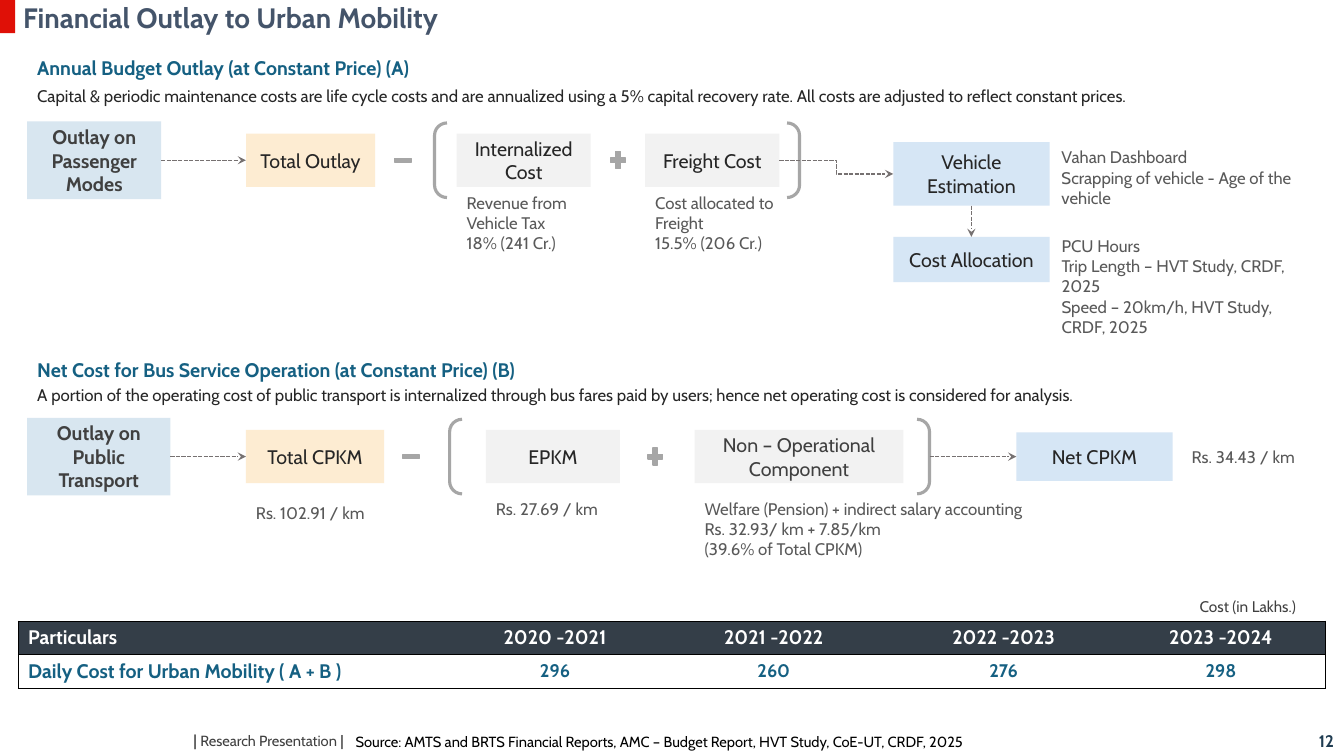
from dataclasses import dataclass

from lxml.etree import SubElement
from pptx import Presentation
from pptx.dml.color import RGBColor
from pptx.enum.dml import MSO_LINE as Dash
from pptx.enum.shapes import MSO_CONNECTOR as Link, MSO_SHAPE as Kind
from pptx.enum.text import MSO_ANCHOR as Anchor, PP_ALIGN as Align
from pptx.oxml.ns import qn
from pptx.util import Inches, Pt

FONT = "Cabin"
BLACK = RGBColor(0x00, 0x00, 0x00)
WHITE = RGBColor(0xFF, 0xFF, 0xFF)
RED = RGBColor(0xDF, 0x10, 0x07)
NAVY = RGBColor(0x20, 0x3D, 0x52)
SLATE = RGBColor(0x44, 0x54, 0x6A)
TEAL = RGBColor(0x15, 0x60, 0x82)
INK = RGBColor(0x26, 0x26, 0x26)
CHARCOAL = RGBColor(0x40, 0x40, 0x40)
NOTE_GREY = RGBColor(0x59, 0x59, 0x59)
ARROW_GREY = RGBColor(0x76, 0x71, 0x71)
SIGN_GREY = RGBColor(0xA6, 0xA6, 0xA6)
PALE_GREY = RGBColor(0xF2, 0xF2, 0xF2)
PALE_TEAL = RGBColor(0xD8, 0xE6, 0xF0)
PALE_BLUE = RGBColor(0xD6, 0xE6, 0xF5)
CREAM = RGBColor(0xFD, 0xEC, 0xD2)
HEADER = RGBColor(0x34, 0x3E, 0x48)


@dataclass
class Box:
    left: float
    top: float
    width: float
    height: float

    def inside(self, left, top, width, height):
        return Box(self.left + left, self.top + top, width, height)

    def centred(self, left, middle, width, height):
        return self.inside(left, middle - height / 2, width, height)

    def lengths(self):
        return [Inches(v) for v in (self.left, self.top, self.width, self.height)]


def add_span(para, text, size, color, bold=False):
    span = para.add_run()
    span.text = text
    span.font.name = FONT
    span.font.size = Pt(size)
    span.font.bold = bold
    span.font.color.rgb = color


def add_text(page, box, lines, size, color, bold=False, align=Align.LEFT, anchor=Anchor.TOP):
    frame = page.shapes.add_textbox(*box.lengths()).text_frame
    frame.word_wrap = True
    frame.vertical_anchor = anchor
    for index, line in enumerate(lines):
        para = frame.add_paragraph() if index else frame.paragraphs[0]
        para.alignment = align
        add_span(para, line, size, color, bold)
    return frame


def add_note(page, box, *lines):
    add_text(page, box, lines, 12, NOTE_GREY)


def add_plain(page, kind, box, fill=None, line=None, width=1):
    shape = page.shapes.add_shape(kind, *box.lengths())
    shape.shadow.inherit = False
    if fill is None:
        shape.fill.background()
    else:
        shape.fill.solid()
        shape.fill.fore_color.rgb = fill
    if line is None:
        shape.line.fill.background()
    else:
        shape.line.color.rgb = line
        shape.line.width = Pt(width)
    return shape


def add_node(page, box, text, fill, color=INK, bold=False):
    node = add_plain(page, Kind.RECTANGLE, box, fill)
    frame = node.text_frame
    frame.word_wrap = True
    frame.vertical_anchor = Anchor.MIDDLE
    frame.paragraphs[0].alignment = Align.CENTER
    add_span(frame.paragraphs[0], text, 14, color, bold)
    return node


def add_arrow(page, start, end, link=Link.STRAIGHT, sides=(3, 1)):
    arrow = page.shapes.add_connector(link, 0, 0, 0, 0)
    arrow.begin_connect(start, sides[0])
    arrow.end_connect(end, sides[1])
    arrow.line.color.rgb = ARROW_GREY
    arrow.line.width = Pt(1)
    arrow.line.dash_style = Dash.SQUARE_DOT
    properties = arrow._element.spPr
    SubElement(properties.find(qn("a:ln")), qn("a:tailEnd"), type="stealth")
    SubElement(properties, qn("a:effectLst"))


def add_heading(page, box, title, description, gap):
    add_text(page, box.inside(0, 0, 5.85, 0.34), [title], 14, TEAL, True)
    add_text(page, box.inside(0, gap, box.width, 0.3), [description], 12, INK)


def add_cost_row(page, box, middle, outlay, total, terms, minus, bracket, plus):
    outlay_text, outlay_width = outlay
    total_text, total_width = total
    first = add_node(page, box.centred(0, middle, outlay_width, 0.77),
                     outlay_text, PALE_TEAL, CHARCOAL, True)
    second = add_node(page, box.centred(2.17, middle, total_width, 0.53), total_text, CREAM)
    add_arrow(page, first, second)
    for kind, left, width, height in ((Kind.MATH_MINUS, minus, 0.23, 0.14),
                                      (Kind.MATH_PLUS, plus, 0.2, 0.23)):
        add_plain(page, kind, box.centred(left, middle, width, height), SIGN_GREY, SIGN_GREY)
    nodes = [add_node(page, box.centred(left, middle, width, 0.53), text, PALE_GREY, color)
             for text, left, width, color in terms]
    left, width = bracket
    pair = add_plain(page, Kind.DOUBLE_BRACKET, box.centred(left, middle, width, 0.74),
                     None, SIGN_GREY, 2.25)
    return nodes, pair


def draw_budget_outlay(page, box):
    add_heading(page, box, "Annual Budget Outlay (at Constant Price) (A)",
                "Capital & periodic maintenance costs are life cycle costs and are annualized using "
                "a 5% capital recovery rate. All costs are adjusted to reflect constant prices.", 0.29)
    terms = [("Internalized Cost", 4.26, 1.33, INK), ("Freight Cost", 6.13, 1.33, INK)]
    nodes, _ = add_cost_row(page, box, 1.08, ("Outlay on Passenger Modes", 1.33),
                            ("Total Outlay", 1.28), terms, 3.61, (4.04, 3.62), 5.76)
    add_note(page, box.inside(4.26, 1.35, 1.43, 0.71), "Revenue from Vehicle Tax", "18% (241 Cr.)")
    add_note(page, box.inside(6.13, 1.35, 1.42, 0.71), "Cost allocated to Freight", "15.5% (206 Cr.)")
    vehicle = add_node(page, box.inside(8.59, 0.9, 1.55, 0.63), "Vehicle Estimation", PALE_BLUE)
    allocation = add_node(page, box.inside(8.59, 1.84, 1.55, 0.45), "Cost Allocation", PALE_BLUE)
    add_arrow(page, nodes[-1], vehicle, Link.ELBOW)
    add_arrow(page, vehicle, allocation, sides=(2, 0))
    add_note(page, box.inside(10.16, 0.9, 2.7, 0.71), "Vahan Dashboard",
             "Scrapping of vehicle - Age of the vehicle")
    add_note(page, box.inside(10.16, 1.78, 2.72, 1.11), "PCU Hours",
             "Trip Length – HVT Study, CRDF, 2025", "Speed – 20km/h, HVT Study, CRDF, 2025")


def draw_bus_net_cost(page, box):
    add_heading(page, box, "Net Cost for Bus Service Operation (at Constant Price) (B)",
                "A portion of the operating cost of public transport is internalized through bus fares "
                "paid by users; hence net operating cost is considered for analysis.", 0.27)
    terms = [("EPKM", 4.55, 1.33, INK), ("Non – Operational Component", 6.62, 2.07, CHARCOAL)]
    _, pair = add_cost_row(page, box, 1.03, ("Outlay on Public Transport", 1.42),
                           ("Total CPKM", 1.37), terms, 3.69, (4.19, 4.76), 6.13)
    net = add_node(page, box.centred(9.81, 1.03, 1.55, 0.48), "Net CPKM", PALE_BLUE)
    add_arrow(page, pair, net)
    add_note(page, box.inside(2.17, 1.44, 1.43, 0.3), "Rs. 102.91 / km")
    add_note(page, box.inside(4.55, 1.4, 1.43, 0.3), "Rs. 27.69 / km")
    add_note(page, box.inside(6.62, 1.4, 3.86, 0.71), "Welfare (Pension) + indirect salary accounting",
             "Rs. 32.93/ km + 7.85/km", "(39.6% of Total CPKM)")
    add_note(page, box.inside(11.45, 0.88, 1.32, 0.3), "Rs. 34.43 / km")


def set_borders(cell, visible):
    properties = cell._tc.get_or_add_tcPr()
    for index, side in enumerate("LRTB"):
        border = SubElement(properties, qn(f"a:ln{side}"), w=str(Pt(0.5)))
        if side in visible:
            fill = SubElement(border, qn("a:solidFill"))
            SubElement(fill, qn("a:srgbClr"), val=str(BLACK))
        else:
            SubElement(border, qn("a:noFill"))
        properties.insert(index, border)


def draw_cost_table(page, box):
    add_text(page, box.inside(11.62, -0.29, 1.36, 0.29), ["Cost (in Lakhs.)"], 11, CHARCOAL)
    rows = [["Particulars", "2020 -2021", "2021 -2022", "2022 -2023", "2023 -2024"],
            ["Daily Cost for Urban Mobility ( A + B )", "296", "260", "276", "298"]]
    table = page.shapes.add_table(2, 5, *box.lengths()).table
    table.first_row = table.horz_banding = False
    for column, width in zip(table.columns, (4.32, 2.01, 2.33, 2.23, 2.08)):
        column.width = Inches(width)
    for r, row in enumerate(rows):
        for c, text in enumerate(row):
            cell = table.cell(r, c)
            cell.vertical_anchor = Anchor.MIDDLE
            if r:
                cell.fill.background()
            else:
                cell.fill.solid()
                cell.fill.fore_color.rgb = HEADER
            set_borders(cell, "TB" + ("L" if c == 0 else "R" if c == 4 else ""))
            para = cell.text_frame.paragraphs[0]
            if c:
                para.alignment = Align.CENTER
                cell.margin_left = cell.margin_right = Inches(0.01 if r else 0.07)
                cell.margin_top = cell.margin_bottom = 0
            add_span(para, text, 13 if r and c else 14, TEAL if r else WHITE, True)


def draw_frame(page, box):
    add_plain(page, Kind.RECTANGLE, box.inside(0, 0, 0.15, 0.33), RED)
    title = add_text(page, box.inside(0, 0, 12.41, 0.38), ["Financial Outlay to Urban Mobility"],
                     20, SLATE, True, anchor=Anchor.MIDDLE)
    title.margin_left = Inches(0.23)
    title.paragraphs[0].line_spacing = 0.9
    footer = add_text(page, box.inside(1.82, 7.2, 5.34, 0.29), ["|"], 11, CHARCOAL, True,
                      anchor=Anchor.MIDDLE)
    add_span(footer.paragraphs[0], " Research Presentation ", 10.5, CHARCOAL)
    add_span(footer.paragraphs[0], "|", 10.5, CHARCOAL, True)
    add_text(page, box.inside(3.43, 7.22, 6.6, 0.28),
             ["Source: AMTS and BRTS Financial Reports, AMC – Budget Report, HVT Study, CoE-UT, CRDF, 2025"],
             10.5, BLACK)
    add_text(page, box.inside(10.33, 7.2, 3, 0.29), ["12"], 12, NAVY, True, Align.RIGHT)


def main():
    deck = Presentation()
    deck.slide_width, deck.slide_height = Inches(13.33), Inches(7.5)
    page = deck.slides.add_slide(deck.slide_layouts[6])
    draw_frame(page, Box(0, 0, 13.33, 7.5))
    draw_budget_outlay(page, Box(0.27, 0.51, 12.89, 2.89))
    draw_bus_net_cost(page, Box(0.27, 3.5, 12.89, 2.11))
    draw_cost_table(page, Box(0.18, 6.16, 12.97, 0.67))
    deck.save("out.pptx")


if __name__ == "__main__":
    main()
